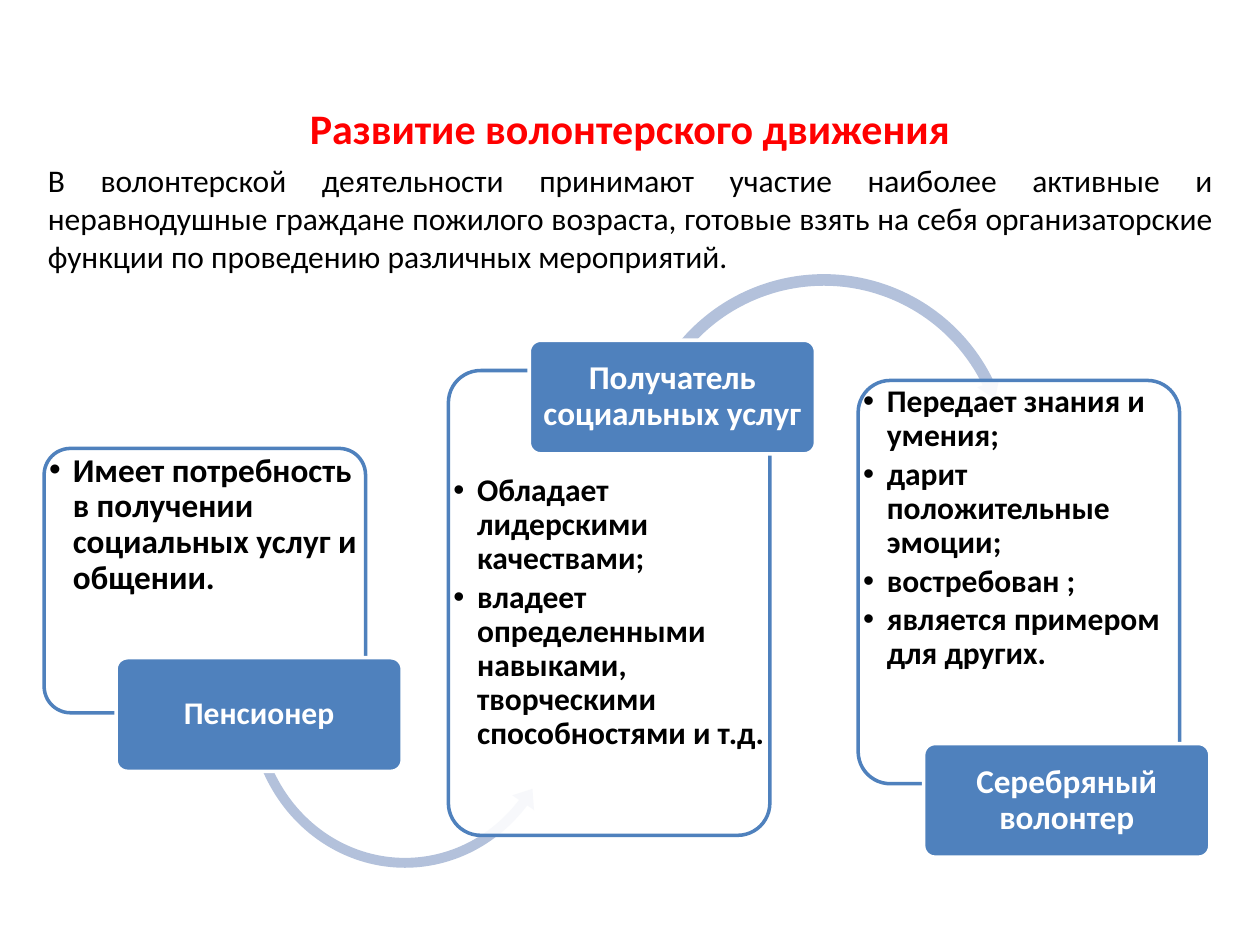
from lxml import etree
from pptx import Presentation
from pptx.dml.color import RGBColor
from pptx.enum.shapes import MSO_SHAPE
from pptx.enum.text import MSO_ANCHOR, MSO_AUTO_SIZE, PP_ALIGN
from pptx.oxml.ns import qn
from pptx.util import Cm, Pt

ROUNDED = MSO_SHAPE.ROUNDED_RECTANGLE
LEFT_ARROW = MSO_SHAPE.LEFT_CIRCULAR_ARROW
RIGHT_ARROW = MSO_SHAPE.CIRCULAR_ARROW
TOP, MIDDLE = MSO_ANCHOR.TOP, MSO_ANCHOR.MIDDLE
CENTER, JUSTIFY = PP_ALIGN.CENTER, PP_ALIGN.JUSTIFY
NO_AUTOFIT = MSO_AUTO_SIZE.NONE

BLUE, PALE_BLUE, WHITE, BLACK, RED = "4F81BD", "B3C1DB", "FFFFFF", "000000", "FF0000"
CARD_WIDTH, LABEL_WIDTH, LABEL_HEIGHT = 6.48, 5.77, 2.29
INDENT = Cm(0.48)


def add_text(paragraph, text, size, color, bold=True):
    run = paragraph.add_run()
    run.text = text
    run.font.name = "Calibri"
    run.font.size = Pt(size)
    run.font.bold = bold
    run.font.color.rgb = RGBColor.from_string(color)


def add_filled(kind, box, fill, line, adjustments):
    shape = slide.shapes.add_shape(kind, *[Cm(value) for value in box])
    shape.shadow.inherit = False
    shape.fill.solid()
    shape.fill.fore_color.rgb = RGBColor.from_string(fill)
    if line:
        shape.line.color.rgb = RGBColor.from_string(line)
        shape.line.width = Pt(2)
    else:
        shape.line.fill.background()
    for index, value in enumerate(adjustments):
        shape.adjustments[index] = value
    return shape


presentation = Presentation()
presentation.slide_width = Cm(25.4)
presentation.slide_height = Cm(19.05)
slide = presentation.slides.add_slide(presentation.slide_layouts[1])
title, body = slide.placeholders

headings = [
    (title, (0, 1.93, 25.4, 3), CENTER, "Развитие волонтерского движения", 24, RED, True),
    (body, (0.71, 3.12, 24, 13), JUSTIFY,
     "В волонтерской деятельности принимают участие наиболее активные и "
     "неравнодушные граждане пожилого возраста, готовые взять на себя "
     "организаторские функции по проведению различных мероприятий.", 18, BLACK, False),
]
for placeholder, box, alignment, text, size, color, bold in headings:
    placeholder.left, placeholder.top, placeholder.width, placeholder.height = [
        Cm(value) for value in box]
    frame = placeholder.text_frame
    frame.auto_size = NO_AUTOFIT
    frame.vertical_anchor = TOP
    paragraph = frame.paragraphs[0]
    properties = paragraph._p.get_or_add_pPr()
    properties.set("marL", "0")
    properties.set("indent", "0")
    etree.SubElement(properties, qn("a:buNone"))
    paragraph.alignment = alignment
    paragraph.space_before = Pt(0)
    add_text(paragraph, text, size, color, bold)

stages = [
    {"card": (0.89, 9.04, 5.33), "list": (9.04, 4.19), "size": 19,
     "items": ["Имеет потребность в получении социальных услуг и общении."],
     "arrow": (LEFT_ARROW, (4.85, 10.67, 6.63, 6.99), (0.03, 3.71, 24.15, 92.94, 0.04)),
     "label": (2.34, 13.26), "name": "Пенсионер", "name_size": 18},
    {"card": (9.04, 7.47, 9.37), "list": (9.47, 7.37), "size": 18,
     "items": ["Обладает лидерскими качествами;",
               "владеет определенными навыками, творческими способностями и т.д."],
     "arrow": (RIGHT_ARROW, (12.7, 5.41, 7.82, 7.82), (0.03, 3.29, 200.59, 131.39, 0.03)),
     "label": (10.67, 6.86), "name": "Получатель социальных услуг", "name_size": 19},
    {"card": (17.3, 7.67, 8.13), "list": (7.67, 6.4), "size": 18,
     "items": ["Передает знания и умения;", "дарит положительные эмоции;",
               "востребован ;", "является примером для других."],
     "arrow": None,
     "label": (18.62, 14.99), "name": "Серебряный волонтер", "name_size": 19},
]
for stage in stages:
    left, top, height = stage["card"]
    card = add_filled(ROUNDED, (left, top, CARD_WIDTH, height), WHITE, BLUE, [0.1])
    fill_color = card._element.spPr.find(qn("a:solidFill")).find(qn("a:srgbClr"))
    etree.SubElement(fill_color, qn("a:alpha"), val="90000")

    list_top, list_height = stage["list"]
    list_box = slide.shapes.add_textbox(
        Cm(left), Cm(list_top), Cm(CARD_WIDTH), Cm(list_height))
    frame = list_box.text_frame
    frame.word_wrap = True
    frame.margin_left = frame.margin_right = Cm(0.1)
    frame.margin_top = frame.margin_bottom = Cm(0.1)
    for index, item in enumerate(stage["items"]):
        paragraph = frame.add_paragraph() if index else frame.paragraphs[0]
        properties = paragraph._p.get_or_add_pPr()
        properties.set("marL", str(INDENT))
        properties.set("indent", str(-INDENT))
        etree.SubElement(properties, qn("a:buFont"), typeface="Arial")
        etree.SubElement(properties, qn("a:buChar"), char="•")
        paragraph.line_spacing = 0.9
        paragraph.space_after = Pt(2.7)
        add_text(paragraph, item, stage["size"], BLACK)

    if stage["arrow"]:
        kind, box, adjustments = stage["arrow"]
        add_filled(kind, box, PALE_BLUE, None, adjustments)

    label = add_filled(
        ROUNDED, (*stage["label"], LABEL_WIDTH, LABEL_HEIGHT), BLUE, WHITE, [0.1])
    frame = label.text_frame
    frame.word_wrap = True
    frame.vertical_anchor = MIDDLE
    frame.margin_left = frame.margin_right = Cm(0.1)
    frame.margin_top = frame.margin_bottom = Cm(0.08)
    paragraph = frame.paragraphs[0]
    paragraph.alignment = CENTER
    paragraph.line_spacing = 0.9
    add_text(paragraph, stage["name"], stage["name_size"], WHITE)

presentation.save("out.pptx")
